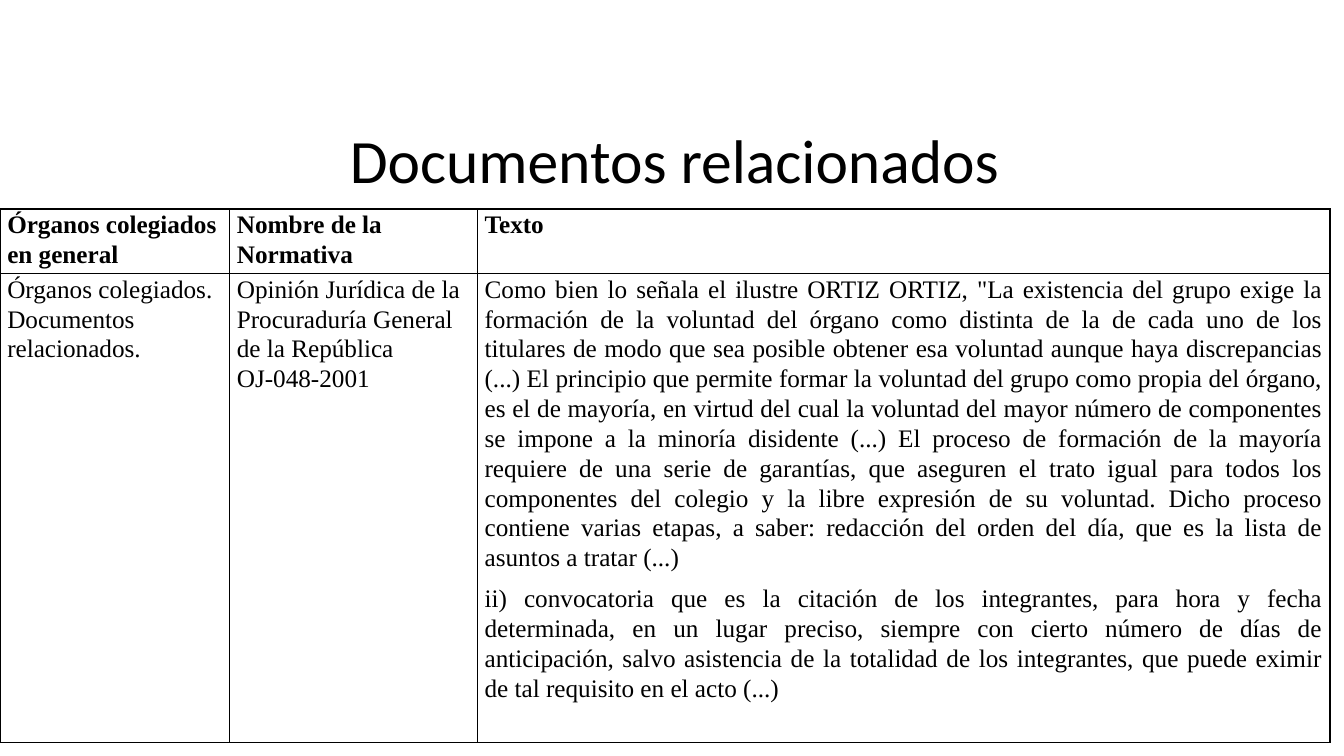
"""Builds the slide "Documentos relacionados" with its table of rules."""
from lxml import etree
from pptx import Presentation
from pptx.dml.color import RGBColor
from pptx.enum.text import MSO_ANCHOR, PP_ALIGN
from pptx.oxml.ns import qn
from pptx.util import Pt

LEFT, CENTER, JUSTIFY = PP_ALIGN.LEFT, PP_ALIGN.CENTER, PP_ALIGN.JUSTIFY
TOP, MIDDLE = MSO_ANCHOR.TOP, MSO_ANCHOR.MIDDLE
BLACK = "000000"

TITLE = "Documentos relacionados"
HEADER = [
    ["Órganos colegiados", "en general"],
    ["Nombre de la Normativa"],
    ["Texto"],
]
BODY = [
    ["Órganos colegiados. Documentos relacionados."],
    ["Opinión Jurídica de la Procuraduría General de la República OJ-048-2001"],
    [
        'Como bien lo señala el ilustre ORTIZ ORTIZ, "La existencia del grupo exige la '
        "formación de la voluntad del órgano como distinta de la de cada uno de los "
        "titulares de modo que sea posible obtener esa voluntad aunque haya discrepancias "
        "(...) El principio que permite formar la voluntad del grupo como propia del órgano, "
        "es el de mayoría, en virtud del cual la voluntad del mayor número de componentes "
        "se impone a la minoría disidente (...) El proceso de formación de la mayoría "
        "requiere de una serie de garantías, que aseguren el trato igual para todos los "
        "componentes del colegio y la libre expresión de su voluntad. Dicho proceso "
        "contiene varias etapas, a saber: redacción del orden del día, que es la lista de "
        "asuntos a tratar (...)",
        "ii) convocatoria que es la citación de los integrantes, para hora y fecha "
        "determinada, en un lugar preciso, siempre con cierto número de días de "
        "anticipación, salvo asistencia de la totalidad de los integrantes, que puede eximir "
        "de tal requisito en el acto (...)",
    ],
]
COLUMN_WIDTHS = [164, 177, 609]
COLUMN_ALIGNS = [LEFT, LEFT, JUSTIFY]
ROW_HEIGHTS = [42.8, 335]
TABLE_TOP = 149.3


def color(hex_code):
    return RGBColor.from_string(hex_code)


def write(frame, paragraphs, font="Times New Roman", size=18, bold=False,
          align=LEFT, line=1.07, after=0):
    frame.word_wrap = True
    for index, text in enumerate(paragraphs):
        paragraph = frame.add_paragraph() if index else frame.paragraphs[0]
        paragraph.alignment = align
        paragraph.line_spacing = line
        paragraph.space_after = Pt(after)
        run = paragraph.add_run()
        run.text = text
        run.font.name, run.font.size, run.font.bold = font, Pt(size), bold
        run.font.color.rgb = color(BLACK)


def add_borders(cell, width=1):
    properties = cell._tc.get_or_add_tcPr()
    for position, side in enumerate(("a:lnL", "a:lnR", "a:lnT", "a:lnB")):
        border = etree.Element(qn(side), w=str(Pt(width)))
        fill = etree.SubElement(border, qn("a:solidFill"))
        etree.SubElement(fill, qn("a:srgbClr"), val=BLACK)
        properties.insert(position, border)


def main():
    deck = Presentation()
    deck.slide_width, deck.slide_height = Pt(960), Pt(540)
    slide = deck.slides.add_slide(deck.slide_layouts[6])

    title = slide.shapes.add_textbox(Pt(68), Pt(83), Pt(828), Pt(67)).text_frame
    title.vertical_anchor = MIDDLE
    write(title, [TITLE], font="Calibri", size=44, align=CENTER, line=0.9)

    table = slide.shapes.add_table(
        len(ROW_HEIGHTS), len(COLUMN_WIDTHS), Pt(0), Pt(TABLE_TOP),
        Pt(sum(COLUMN_WIDTHS)), Pt(sum(ROW_HEIGHTS))).table
    table.horz_banding = False
    for column, width in zip(table.columns, COLUMN_WIDTHS):
        column.width = Pt(width)
    for row_index, contents in enumerate([HEADER, BODY]):
        table.rows[row_index].height = Pt(ROW_HEIGHTS[row_index])
        is_header = row_index == 0
        for column_index, paragraphs in enumerate(contents):
            cell = table.cell(row_index, column_index)
            cell.fill.background()
            cell.vertical_anchor = TOP
            cell.margin_left = cell.margin_right = Pt(5.2)
            cell.margin_top = cell.margin_bottom = Pt(0)
            add_borders(cell)
            write(cell.text_frame, paragraphs, bold=is_header,
                  align=COLUMN_ALIGNS[column_index], after=0 if is_header else 8)

    deck.save("out.pptx")


if __name__ == "__main__":
    main()
